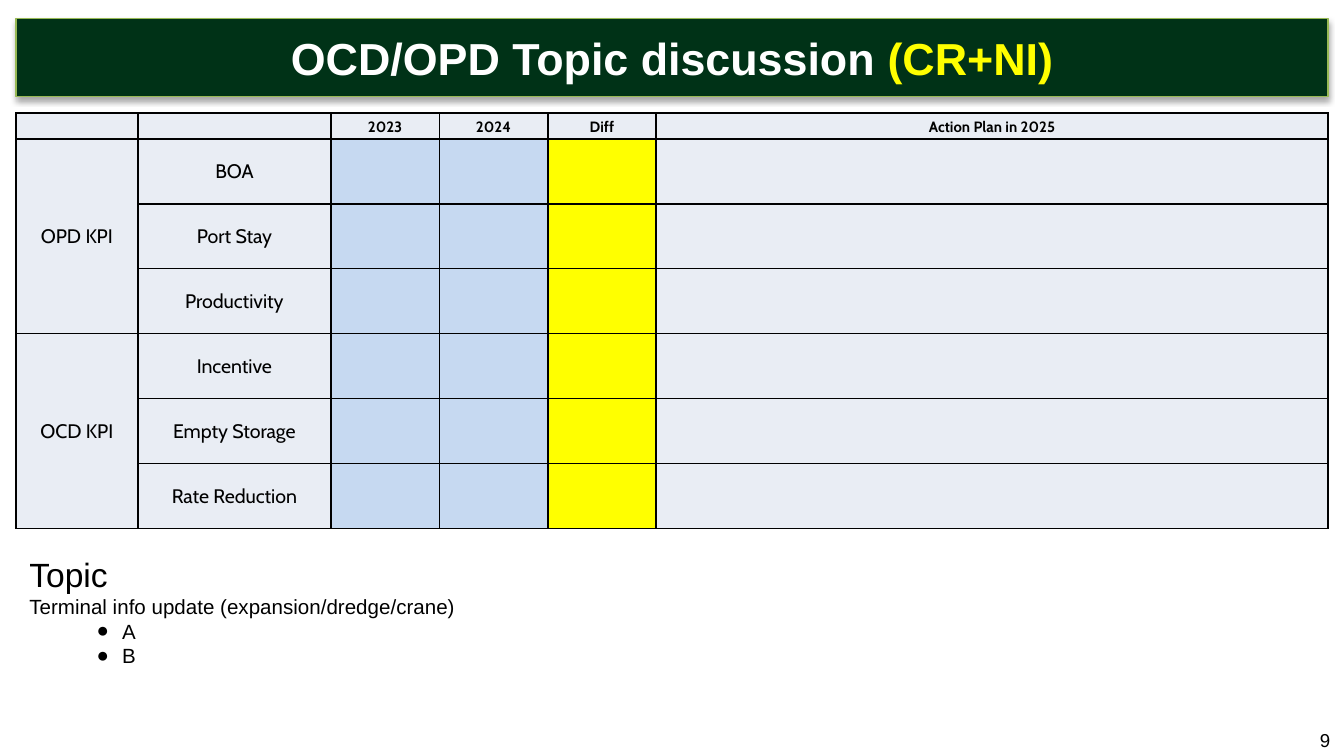
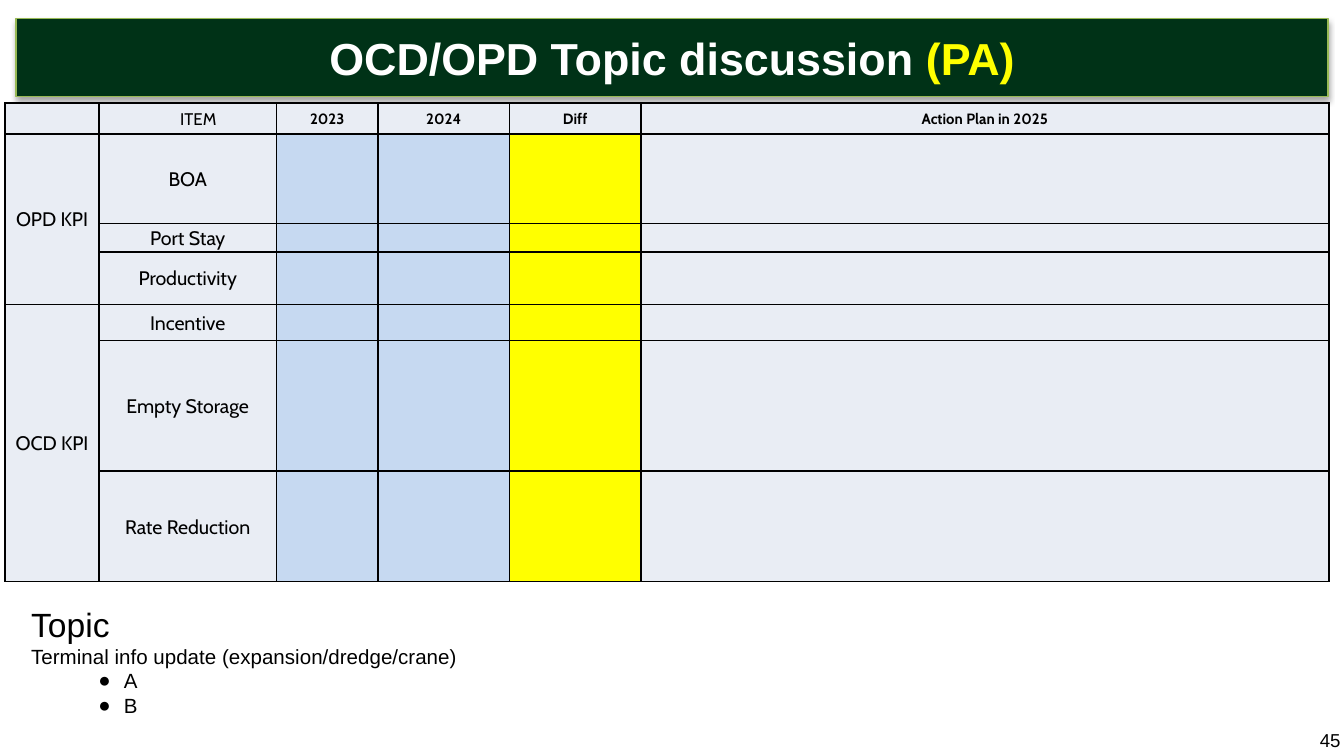
from lxml import etree
from pptx import Presentation
from pptx.dml.color import RGBColor
from pptx.enum.text import MSO_ANCHOR, MSO_AUTO_SIZE, PP_ALIGN
from pptx.oxml.ns import qn
from pptx.util import Pt

MIDDLE, TOP = MSO_ANCHOR.MIDDLE, MSO_ANCHOR.TOP
CENTER, LEFT = PP_ALIGN.CENTER, PP_ALIGN.LEFT
NO_FIT = MSO_AUTO_SIZE.NONE

BLACK = RGBColor(0x00, 0x00, 0x00)
WHITE = RGBColor(0xFF, 0xFF, 0xFF)
YELLOW = RGBColor(0xFF, 0xFF, 0x00)
DARK_GREEN = RGBColor(0x00, 0x32, 0x17)
LIGHT_GREEN = RGBColor(0x98, 0xB9, 0x55)
PALE_GREY = RGBColor(0xE9, 0xED, 0xF4)
PALE_BLUE = RGBColor(0xC6, 0xD9, 0xF1)

TEXT_FONT, TABLE_FONT = "Arial", "Cabin"
TITLE_AND_CONTENT = 1
BORDER_SIDES = ("a:lnL", "a:lnR", "a:lnT", "a:lnB")

# KPI table content, shared by all regions
YEAR_HEADERS = ["2023", "2024", "Diff", "Action Plan in 2025"]
VALUE_FILLS = [PALE_BLUE, PALE_BLUE, YELLOW, PALE_GREY]
KPI_GROUPS = {
    "OPD KPI": ["BOA", "Port Stay", "Productivity"],
    "OCD KPI": ["Incentive", "Empty Storage", "Rate Reduction"],
}
TOPIC_LINES = [
    # text, size, bulleted
    ("Topic", 18, False),
    ("Terminal info update (expansion/dredge/crane)", 11, False),
    ("A", 11, True),
    ("B", 11, True),
]


def add_xml(parent, tag, **attributes):
    return etree.SubElement(parent, qn(tag), attributes)


def place(shape, left, top, width, height):
    shape.left, shape.top = Pt(left), Pt(top)
    shape.width, shape.height = Pt(width), Pt(height)


def set_font(font, name, size, color=BLACK, bold=False):
    font.name, font.size, font.bold = name, Pt(size), bold
    font.color.rgb = color


class KpiDeck:
    def __init__(self):
        self.presentation = Presentation()
        self.presentation.slide_width = Pt(720)
        self.presentation.slide_height = Pt(405)
        self.slide = None

    def new_slide(self):
        layout = self.presentation.slide_layouts[TITLE_AND_CONTENT]
        self.slide = self.presentation.slides.add_slide(layout)

    def title_band(self, region):
        band = self.slide.shapes.title
        place(band, 8.5, 9.75, 703, 42)
        band.fill.solid()
        band.fill.fore_color.rgb = DARK_GREEN
        band.line.color.rgb = LIGHT_GREEN
        band.line.width = Pt(0.75)

        # Soft shadow below the band
        band.shadow.inherit = False
        effects = band.element.spPr.find(qn("a:effectLst"))
        shadow = add_xml(effects, "a:outerShdw", blurRad=str(Pt(3.1)),
                         dist=str(Pt(1.8)), dir="5400000", rotWithShape="0")
        shade = add_xml(shadow, "a:srgbClr", val=str(BLACK))
        add_xml(shade, "a:alpha", val="35000")

        frame = band.text_frame
        frame.auto_size, frame.vertical_anchor = NO_FIT, MIDDLE
        frame.margin_left = frame.margin_right = 0
        frame.margin_top = frame.margin_bottom = 0
        heading = frame.paragraphs[0]
        heading.alignment = CENTER
        for words, color in (("OCD/OPD Topic discussion ", WHITE),
                             (f"({region})", YELLOW)):
            run = heading.add_run()
            run.text = words
            set_font(run.font, TEXT_FONT, 24, color, True)

    def cell(self, cell, text="", fill=PALE_GREY, size=10.5, bold=False):
        cell.fill.solid()
        cell.fill.fore_color.rgb = fill
        cell.vertical_anchor = MIDDLE
        cell.margin_left = cell.margin_right = cell.margin_top = Pt(0.72)
        cell.margin_bottom = 0
        paragraph = cell.text_frame.paragraphs[0]
        paragraph.alignment = CENTER
        if text:
            paragraph.text = text
            set_font(paragraph.font, TABLE_FONT, size, BLACK, bold)
        else:
            # Keeps an empty cell from stretching its row
            add_xml(paragraph._p, "a:endParaRPr", sz="800")

        properties = cell._tc.get_or_add_tcPr()
        for index, side in enumerate(BORDER_SIDES):
            border = etree.Element(qn(side), w=str(Pt(1)))
            add_xml(add_xml(border, "a:solidFill"), "a:srgbClr", val=str(BLACK))
            properties.insert(index, border)

    def kpi_table(self, left, top, columns, rows, item_header=""):
        frame = self.slide.shapes.add_table(
            len(rows), len(columns), Pt(left), Pt(top),
            Pt(sum(columns)), Pt(sum(rows)))
        table = frame.table
        table.first_row = table.horz_banding = False
        for column, width in zip(table.columns, columns):
            column.width = Pt(width)
        for row, height in zip(table.rows, rows):
            row.height = Pt(height)

        # Header row
        self.cell(table.cell(0, 0))
        self.cell(table.cell(0, 1), item_header, size=9)
        if item_header:
            table.cell(0, 1).margin_left = Pt(12)
        for column, header in enumerate(YEAR_HEADERS, 2):
            self.cell(table.cell(0, column), header, size=8, bold=True)

        # One merged group cell beside its items
        row = 1
        for group, items in KPI_GROUPS.items():
            first = row
            for item in items:
                self.cell(table.cell(row, 0), group if row == first else "")
                self.cell(table.cell(row, 1), item)
                for column, fill in enumerate(VALUE_FILLS, 2):
                    self.cell(table.cell(row, column), fill=fill)
                row += 1
            table.cell(first, 0).merge(table.cell(row - 1, 0))

    def topic_list(self, left, top):
        body = self.slide.placeholders[1]
        place(body, left, top, 703, 96)
        frame = body.text_frame
        frame.auto_size, frame.vertical_anchor = NO_FIT, TOP
        for index, (text, size, bulleted) in enumerate(TOPIC_LINES):
            line = frame.add_paragraph() if index else frame.paragraphs[0]
            line.text = text
            line.level = int(bulleted)
            line.alignment = LEFT
            line.space_before = Pt(0)
            set_font(line.font, TEXT_FONT, size)
            properties = line._p.get_or_add_pPr()
            properties.set("marL", str(Pt(49.7 if bulleted else 0)))
            properties.set("indent", str(Pt(-13.7 if bulleted else 0)))
            bullet = etree.Element(qn("a:buChar" if bulleted else "a:buNone"))
            if bulleted:
                bullet.set("char", "●")
            properties.find(qn("a:defRPr")).addprevious(bullet)

    def page_number(self, number):
        box = self.slide.shapes.add_textbox(Pt(700), Pt(388), Pt(46), Pt(16.6))
        frame = box.text_frame
        frame.word_wrap = True
        frame.vertical_anchor = MIDDLE
        label = frame.paragraphs[0]
        label.text = str(number)
        set_font(label.font, TEXT_FONT, 10)


def main():
    deck = KpiDeck()

    # CR+NI region
    deck.new_slide()
    deck.title_band("CR+NI")
    deck.kpi_table(8.5, 60.6, [65.4, 103.4, 58.1, 58.1, 58.1, 360],
                   [13.8] + [34.8] * 6)
    deck.topic_list(8.5, 293)
    deck.page_number(9)

    # PA region
    deck.new_slide()
    deck.title_band("PA")
    deck.kpi_table(2.7, 55.2, [50.4, 95, 54.5, 70.4, 70.4, 368.6],
                   [16.5, 48, 15.3, 28.1, 19.4, 70, 59.2], "ITEM")
    deck.topic_list(9.5, 319.7)
    deck.page_number(45)

    deck.presentation.save("out.pptx")


if __name__ == "__main__":
    main()
